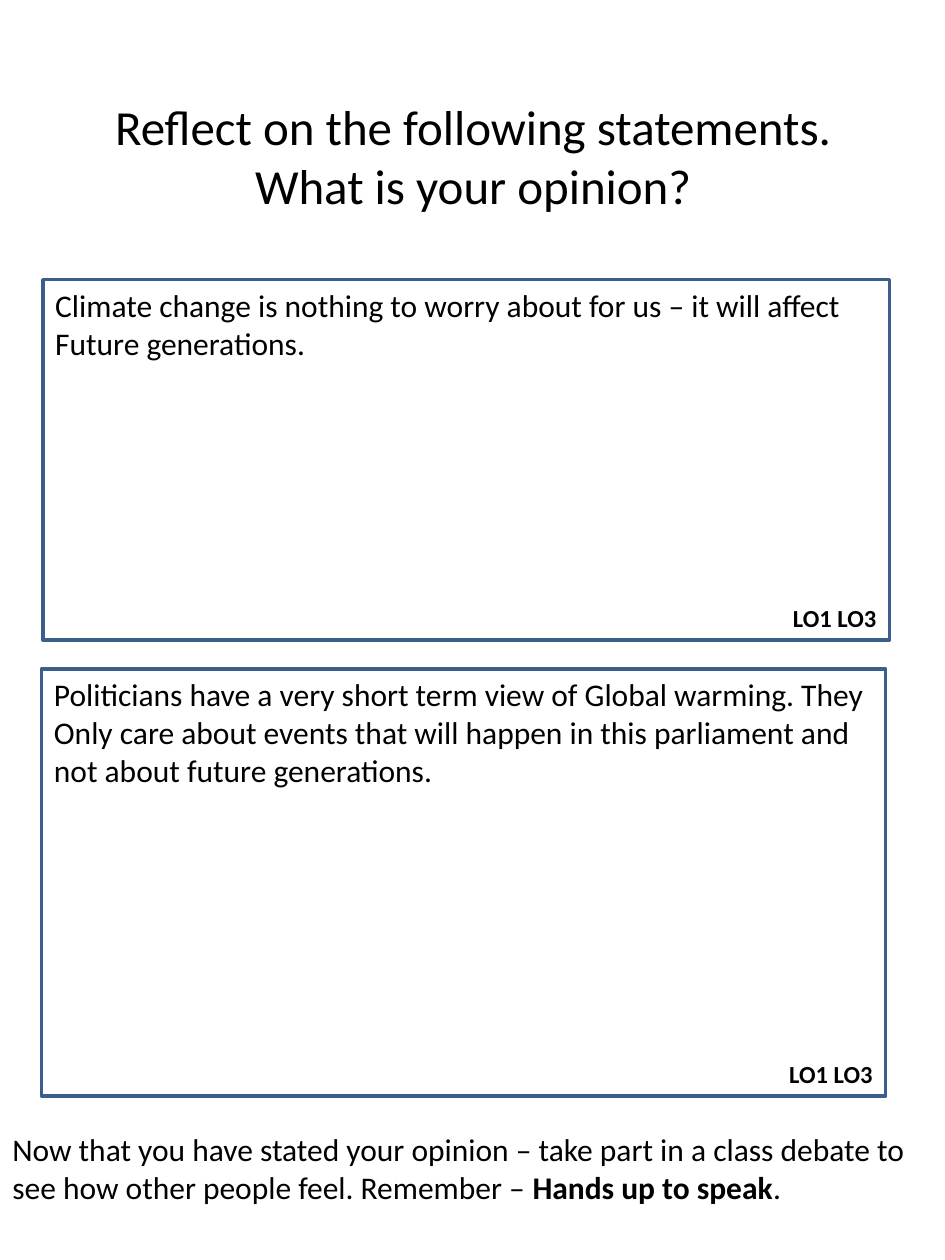
from pptx import Presentation
from pptx.dml.color import RGBColor
from pptx.enum.shapes import MSO_SHAPE
from pptx.enum.text import MSO_ANCHOR, PP_ALIGN
from pptx.util import Inches, Pt

RECTANGLE = MSO_SHAPE.RECTANGLE
MIDDLE = MSO_ANCHOR.MIDDLE
LEFT, CENTER = PP_ALIGN.LEFT, PP_ALIGN.CENTER

BLACK = RGBColor(0x00, 0x00, 0x00)
BORDER_BLUE = RGBColor(0x3A, 0x5F, 0x8C)
FONT = "Calibri"
TAG_WIDTH, TAG_HEIGHT = 0.87, 0.34

STATEMENTS = [
    ((0.34, 2.22, 6.72, 2.86), 6.57, 2.83,
     ["Climate change is nothing to worry about for us – it will affect",
      "Future generations."]),
    ((0.33, 5.31, 6.7, 3.39), 6.7, 1.01,
     ["Politicians have a very short term view of Global warming. They",
      "Only care about events that will happen in this parliament and",
      "not about future generations."]),
]


def add_text(slide, box, lines, size, align=LEFT, bold=False, wrap=False):
    frame = slide.shapes.add_textbox(*map(Inches, box)).text_frame
    frame.word_wrap = wrap
    frame.text = "\n".join(lines)
    for paragraph in frame.paragraphs:
        paragraph.alignment = align
        for run in paragraph.runs:
            style_run(run, size, bold)
    return frame


def style_run(run, size, bold):
    run.font.name = FONT
    run.font.size = Pt(size)
    run.font.bold = bold
    run.font.color.rgb = BLACK


def add_heading(slide, box):
    heading = add_text(
        slide, box,
        ["Reflect on the following statements. What is your opinion?"],
        28, CENTER, wrap=True)
    heading.vertical_anchor = MIDDLE


def add_statement(slide, box, text_width, text_height, lines):
    left, top, width, height = box
    border = slide.shapes.add_shape(RECTANGLE, *map(Inches, box))
    border.shadow.inherit = False
    border.fill.background()
    border.line.color.rgb = BORDER_BLUE
    border.line.width = Pt(2)
    add_text(slide, (left, top, text_width, text_height), lines, 18)
    tag_box = (left + width - TAG_WIDTH, top + height - TAG_HEIGHT,
               TAG_WIDTH, TAG_HEIGHT)
    add_text(slide, tag_box, ["LO1 LO3"], 14, CENTER, bold=True)


def add_debate_prompt(slide, box):
    prompt = add_text(
        slide, box,
        ["Now that you have stated your opinion – take part in a class debate to",
         "see how other people feel. Remember – "], 18)
    closing = prompt.paragraphs[-1]
    for words, bold in (("Hands up to speak", True), (".", False)):
        run = closing.add_run()
        run.text = words
        style_run(run, 18, bold)


def main():
    deck = Presentation()
    deck.slide_width, deck.slide_height = Inches(7.5), Inches(10)
    slide = deck.slides.add_slide(deck.slide_layouts[6])
    add_heading(slide, (0.38, 0.4, 6.75, 1.67))
    for statement in STATEMENTS:
        add_statement(slide, *statement)
    add_debate_prompt(slide, (0, 8.92, 7.43, 0.71))
    deck.save("out.pptx")


if __name__ == "__main__":
    main()
